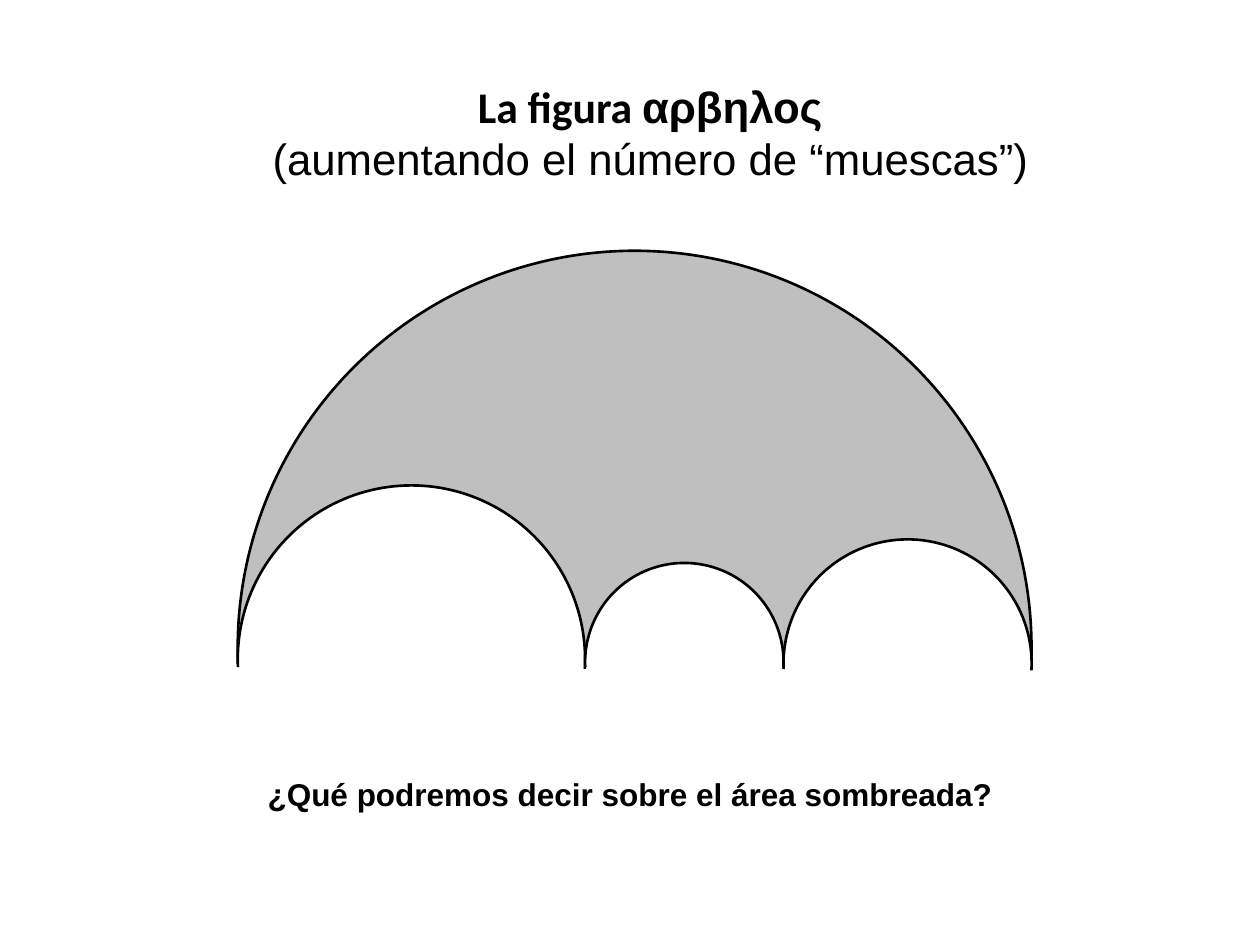
from pptx import Presentation
from pptx.dml.color import RGBColor
from pptx.enum import shapes, text
from pptx.util import Pt

COLORS = {"ink": "000000", "shade": "BFBFBF", "notch": "FFFFFF"}
# Arc angles in degrees; the adjustment unit is 100000/60000 of a degree
ARC_START, ARC_END = 267.33, 93.21
ADJUST_PER_DEGREE = 0.6


def color(name):
    return RGBColor.from_string(COLORS[name])


def add_centered_text(slide, box, size, lines):
    """Each line is a list of (text, font name, bold) runs."""
    shape = slide.shapes.add_textbox(*map(Pt, box))
    frame = shape.text_frame
    frame.word_wrap = True
    frame.auto_size = text.MSO_AUTO_SIZE.NONE
    frame.vertical_anchor = text.MSO_ANCHOR.TOP
    for index, line in enumerate(lines):
        paragraph = frame.add_paragraph() if index else frame.paragraphs[0]
        paragraph.alignment = text.PP_ALIGN.CENTER
        for content, font_name, bold in line:
            run = paragraph.add_run()
            run.text = content
            run.font.name = font_name
            run.font.size = Pt(size)
            run.font.bold = bold
            run.font.color.rgb = color("ink")


def add_half_circle(group, left, center_y, diameter, fill):
    shape = group.shapes.add_shape(
        shapes.MSO_SHAPE.ARC, Pt(left), Pt(center_y - diameter / 2),
        Pt(diameter), Pt(diameter))
    shape.rotation = 270
    shape.adjustments[0] = ARC_START * ADJUST_PER_DEGREE
    shape.adjustments[1] = ARC_END * ADJUST_PER_DEGREE
    shape.shadow.inherit = False
    shape.fill.solid()
    shape.fill.fore_color.rgb = color(fill)
    shape.line.color.rgb = color("ink")
    shape.line.width = Pt(1.5)


def add_arbelos(slide, left, top, width, notches):
    """Shaded half circle with notches of (share of width, drop) side by side."""
    group = slide.shapes.add_group_shape()
    center_y = top + width / 2
    add_half_circle(group, left, center_y, width, "shade")
    for share, drop in notches:
        diameter = width * share
        add_half_circle(group, left, center_y + drop, diameter, "notch")
        left += diameter


def main():
    presentation = Presentation()
    presentation.slide_width, presentation.slide_height = Pt(720), Pt(540)
    slide = presentation.slides.add_slide(presentation.slide_layouts[6])

    # Title
    add_centered_text(slide, (144.72, 41.76, 453.6, 90), 25, [
        [("La figura ", "Calibri", True), ("αρβηλος", "Arial", True)],
        [("(aumentando el número de “muescas”)", "Arial", False)],
    ])
    # Question
    add_centered_text(slide, (144.72, 439.2, 430.56, 28.8), 18, [
        [("¿Qué podremos decir sobre el área sombreada?", "Arial", True)],
    ])
    # Figure: notch diameters fill the base of the large half circle
    add_arbelos(slide, 135.9, 143.3, 453.6,
                [(7 / 16, 6.5), (1 / 4, 8.3), (5 / 16, 9)])

    presentation.save("out.pptx")


if __name__ == "__main__":
    main()
